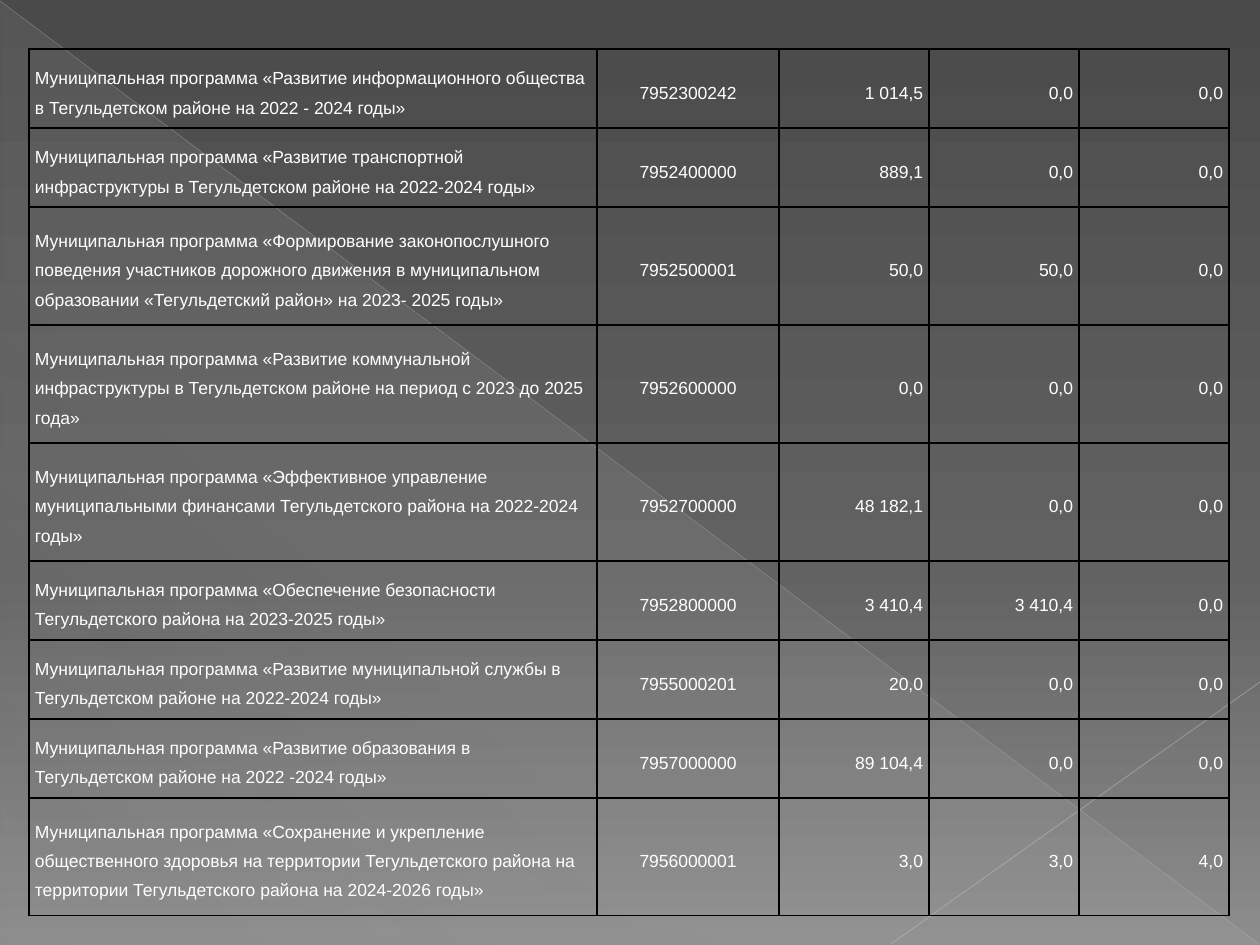
from dataclasses import dataclass
from lxml import etree
from pptx import Presentation
from pptx.dml.color import RGBColor
from pptx.enum.shapes import MSO_CONNECTOR, MSO_SHAPE
from pptx.enum.text import MSO_ANCHOR, PP_ALIGN
from pptx.oxml.ns import qn
from pptx.util import Pt

LEFT, MID, RIGHT = PP_ALIGN.LEFT, PP_ALIGN.CENTER, PP_ALIGN.RIGHT
CENTER = MSO_ANCHOR.MIDDLE
WEDGE = MSO_SHAPE.RIGHT_TRIANGLE
STRAIGHT = MSO_CONNECTOR.STRAIGHT
SCALE = 914400 / 126


@dataclass(frozen=True)
class Theme:
    font: str = "Arial"
    size: int = 10
    space: float = 1.5
    text: str = "FFFFFF"
    border: str = "000000"
    back: tuple = ((0, "4A4A4A", 100), (60, "626262", 100), (100, "8C8C8C", 100))
    wedge: tuple = ((0, "D2D2D2", 10), (70, "D2D2D2", 8), (100, "D2D2D2", 1))
    long: str = "BFBFBF"
    short: str = "C6C6C6"


def emu(px):
    return round(px * SCALE)


def add(parent, tag, **attrs):
    node = etree.SubElement(parent, qn(tag))
    for key, value in attrs.items():
        node.set(key, str(value))
    return node


class Deck:
    def __init__(self, theme, width, height):
        self.theme = theme
        self.file = Presentation()
        self.file.slide_width, self.file.slide_height = emu(width), emu(height)
        self.slide = self.file.slides.add_slide(self.file.slide_layouts[6])

    def shade(self, fill, owner, stops, angle):
        fill.gradient()
        grad = next(owner.iter(qn("a:gradFill")))
        for child in list(grad):
            grad.remove(child)
        group = add(grad, "a:gsLst")
        for place, color, alpha in stops:
            stop = add(group, "a:gs", pos=place * 1000)
            tint = add(stop, "a:srgbClr", val=color)
            add(tint, "a:alpha", val=alpha * 1000)
        add(grad, "a:lin", ang=angle * 60000, scaled=0)

    def back(self):
        self.shade(self.slide.background.fill, self.slide.element, self.theme.back, 90)

    def wedge(self, left, top, width, height):
        shape = self.slide.shapes.add_shape(WEDGE, *map(emu, (left, top, width, height)))
        shape.shadow.inherit = False
        shape.line.fill.background()
        self.shade(shape.fill, shape.element, self.theme.wedge, 133)

    def line(self, start, end, color, width, alpha):
        line = self.slide.shapes.add_connector(STRAIGHT, *map(emu, start + end))
        line.line.color.rgb = RGBColor.from_string(color)
        line.line.width = Pt(width)
        tint = next(line.element.spPr.iter(qn("a:srgbClr")))
        add(tint, "a:alpha", val=alpha * 1000)
        add(line.element.spPr, "a:effectLst")

    def border(self, cell):
        props = cell._tc.get_or_add_tcPr()
        for side in ("L", "R", "T", "B"):
            edge = add(props, f"a:ln{side}", w=Pt(1))
            fill = add(edge, "a:solidFill")
            add(fill, "a:srgbClr", val=self.theme.border)

    def cell(self, cell, text, align):
        cell.margin_left = cell.margin_right = emu(6)
        cell.margin_top = cell.margin_bottom = 0
        cell.vertical_anchor = CENTER
        self.border(cell)
        cell.fill.background()
        para = cell.text_frame.paragraphs[0]
        para.alignment, para.line_spacing = align, self.theme.space
        run = para.add_run()
        run.text = text
        run.font.name, run.font.size = self.theme.font, Pt(self.theme.size)
        run.font.color.rgb = RGBColor.from_string(self.theme.text)

    def table(self, left, top, cols, heights, rows, aligns):
        frame = self.slide.shapes.add_table(
            len(rows), len(cols), *map(emu, (left, top, sum(cols), sum(heights))))
        table = frame.table
        table.first_row = table.horz_banding = False
        for col, width in zip(table.columns, cols):
            col.width = emu(width)
        for row, height, values in zip(table.rows, heights, rows):
            row.height = emu(height)
            for cell, text, align in zip(row.cells, values, aligns):
                self.cell(cell, text, align)


LOW, TALL = 79, 118
PLANS = [
    (LOW, "«Развитие информационного общества в Тегульдетском районе на 2022 - 2024 годы»",
     "7952300242", "1 014,5", "0,0", "0,0"),
    (LOW, "«Развитие транспортной инфраструктуры в Тегульдетском районе на 2022-2024 годы»",
     "7952400000", "889,1", "0,0", "0,0"),
    (TALL, "«Формирование законопослушного поведения участников дорожного движения "
     "в муниципальном образовании «Тегульдетский район» на 2023- 2025 годы»",
     "7952500001", "50,0", "50,0", "0,0"),
    (TALL, "«Развитие коммунальной инфраструктуры в Тегульдетском районе "
     "на период с 2023 до 2025 года»",
     "7952600000", "0,0", "0,0", "0,0"),
    (TALL, "«Эффективное управление муниципальными финансами "
     "Тегульдетского района на 2022-2024 годы»",
     "7952700000", "48 182,1", "0,0", "0,0"),
    (LOW, "«Обеспечение безопасности Тегульдетского района на 2023-2025 годы»",
     "7952800000", "3 410,4", "3 410,4", "0,0"),
    (LOW, "«Развитие муниципальной службы в Тегульдетском районе на 2022-2024 годы»",
     "7955000201", "20,0", "0,0", "0,0"),
    (LOW, "«Развитие образования в Тегульдетском районе на 2022 -2024 годы»",
     "7957000000", "89 104,4", "0,0", "0,0"),
    (TALL, "«Сохранение и укрепление общественного здоровья на территории Тегульдетского "
     "района на территории Тегульдетского района на 2024-2026 годы»",
     "7956000001", "3,0", "3,0", "4,0"),
]


def main():
    theme = Theme()
    deck = Deck(theme, 1260, 945)
    deck.back()
    deck.wedge(1, 2, 1258, 942)
    deck.line((0, 1), (1259, 944), theme.long, 0.39, 35)
    deck.line((1260, 682), (891, 944), theme.short, 0.47, 45)
    heights = [plan[0] for plan in PLANS]
    rows = [(f"Муниципальная программа {name}", *sums) for _, name, *sums in PLANS]
    deck.table(29, 49, [568, 182] + [150] * 3, heights, rows, [LEFT, MID] + [RIGHT] * 3)
    deck.file.save("out.pptx")


if __name__ == "__main__":
    main()
